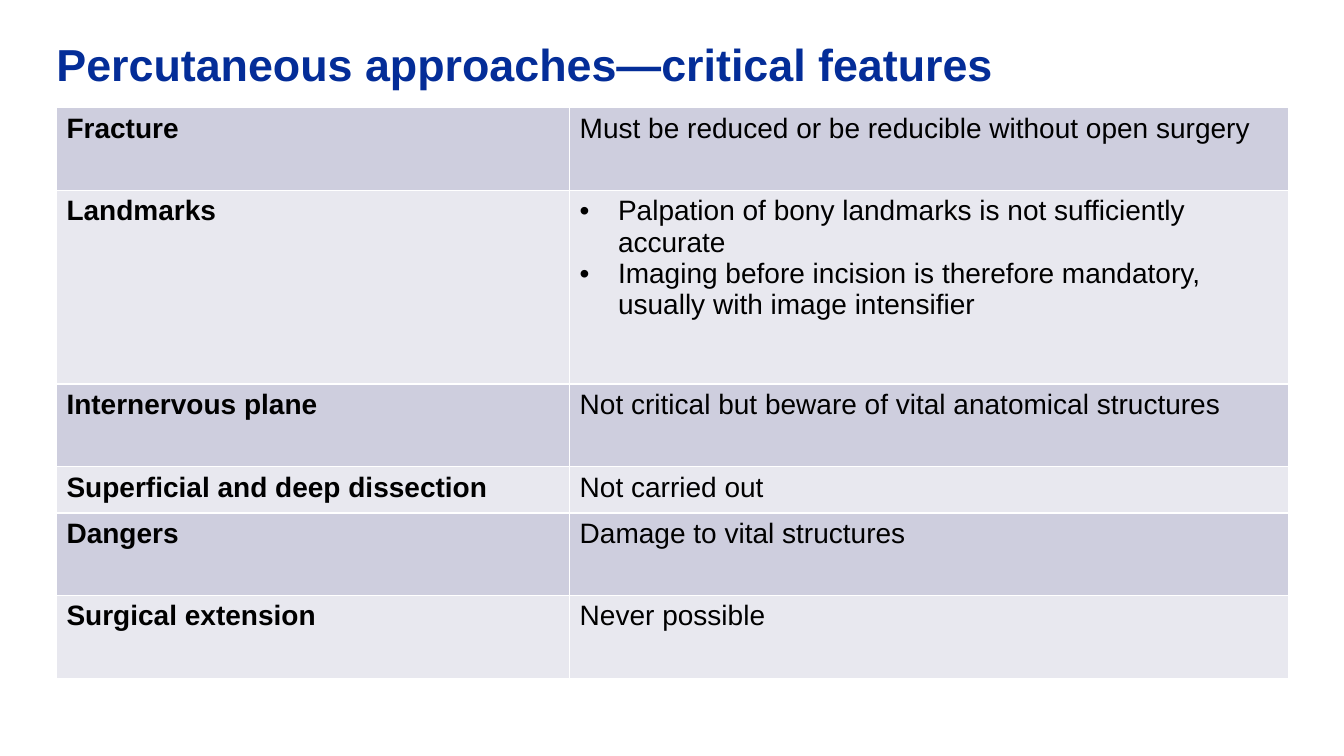
import pptx
import pptx.dml.color
import pptx.enum.text
import pptx.oxml
import pptx.oxml.ns
import pptx.util

COLORS = {
    "title": "042D98",
    "text": "000000",
    "band_dark": "CECEDE",
    "band_light": "E8E8EF",
    "border": "FFFFFF",
}

FEATURES = [
    ("Fracture", ["Must be reduced or be reducible without open surgery"], 0.82),
    ("Landmarks", ["Palpation of bony landmarks is not sufficiently accurate",
                   "Imaging before incision is therefore mandatory, usually with image intensifier"], 1.92),
    ("Internervous plane", ["Not critical but beware of vital anatomical structures"], 0.82),
    ("Superficial and deep dissection", ["Not carried out"], 0.46),
    ("Dangers", ["Damage to vital structures"], 0.82),
    ("Surgical extension", ["Never possible"], 0.82),
]


class SlideBuilder:
    font_name = "Arial"
    title_size = 32
    table_size = 20
    bullet_indent = 0.38

    def __init__(self, slide):
        self.slide = slide

    def color(self, name):
        return pptx.dml.color.RGBColor.from_string(COLORS[name])

    def add_run(self, paragraph, text, size, color, bold):
        run = paragraph.add_run()
        run.text = text
        run.font.name = self.font_name
        run.font.size = pptx.util.Pt(size)
        run.font.bold = bold
        run.font.color.rgb = self.color(color)

    def add_title(self, text, left, top, width, height):
        box = self.slide.shapes.add_textbox(*map(pptx.util.Inches, (left, top, width, height)))
        frame = box.text_frame
        frame.word_wrap = True
        frame.vertical_anchor = pptx.enum.text.MSO_ANCHOR.TOP
        frame.margin_left = frame.margin_right = frame.margin_top = frame.margin_bottom = 0
        paragraph = frame.paragraphs[0]
        paragraph.line_spacing = 0.9
        self.add_run(paragraph, text, self.title_size, "title", True)

    def add_bullet(self, paragraph):
        properties = paragraph._p.get_or_add_pPr()
        indent = pptx.util.Inches(self.bullet_indent)
        properties.set("marL", str(indent))
        properties.set("indent", str(-indent))
        namespace = pptx.oxml.ns.nsdecls("a")
        properties.append(pptx.oxml.parse_xml(f'<a:buFont {namespace} typeface="{self.font_name}"/>'))
        properties.append(pptx.oxml.parse_xml(f'<a:buChar {namespace} char="•"/>'))

    def add_borders(self, cell):
        properties = cell._tc.get_or_add_tcPr()
        for position, side in enumerate(("lnL", "lnR", "lnT", "lnB")):
            properties.insert(position, pptx.oxml.parse_xml(
                f'<a:{side} {pptx.oxml.ns.nsdecls("a")} w="{pptx.util.Pt(1)}"><a:solidFill>'
                f'<a:srgbClr val="{COLORS["border"]}"/></a:solidFill></a:{side}>'))

    def fill_cell(self, cell, lines, band, bold):
        cell.fill.solid()
        cell.fill.fore_color.rgb = self.color(band)
        self.add_borders(cell)
        frame = cell.text_frame
        for index, line in enumerate(lines):
            paragraph = frame.add_paragraph() if index else frame.paragraphs[0]
            paragraph.alignment = pptx.enum.text.PP_ALIGN.LEFT
            if len(lines) > 1:
                self.add_bullet(paragraph)
            self.add_run(paragraph, line, self.table_size, "text", bold)

    def add_feature_table(self, features, left, top, column_widths):
        height = sum(feature[2] for feature in features)
        frame = self.slide.shapes.add_table(
            len(features), len(column_widths),
            *map(pptx.util.Inches, (left, top, sum(column_widths), height)))
        table = frame.table
        table.first_row = False
        table.horz_banding = False
        for column, width in zip(table.columns, column_widths):
            column.width = pptx.util.Inches(width)
        for index, (name, details, row_height) in enumerate(features):
            table.rows[index].height = pptx.util.Inches(row_height)
            band = "band_light" if index % 2 else "band_dark"
            self.fill_cell(table.cell(index, 0), [name], band, True)
            self.fill_cell(table.cell(index, 1), details, band, False)


def main():
    presentation = pptx.Presentation()
    presentation.slide_width = pptx.util.Inches(13.33)
    presentation.slide_height = pptx.util.Inches(7.5)
    builder = SlideBuilder(presentation.slides.add_slide(presentation.slide_layouts[6]))
    builder.add_title("Percutaneous approaches—critical features", 0.56, 0.42, 12.07, 1)
    builder.add_feature_table(FEATURES, 0.56, 1.07, (5.09, 7.13))
    presentation.save("out.pptx")


if __name__ == "__main__":
    main()
